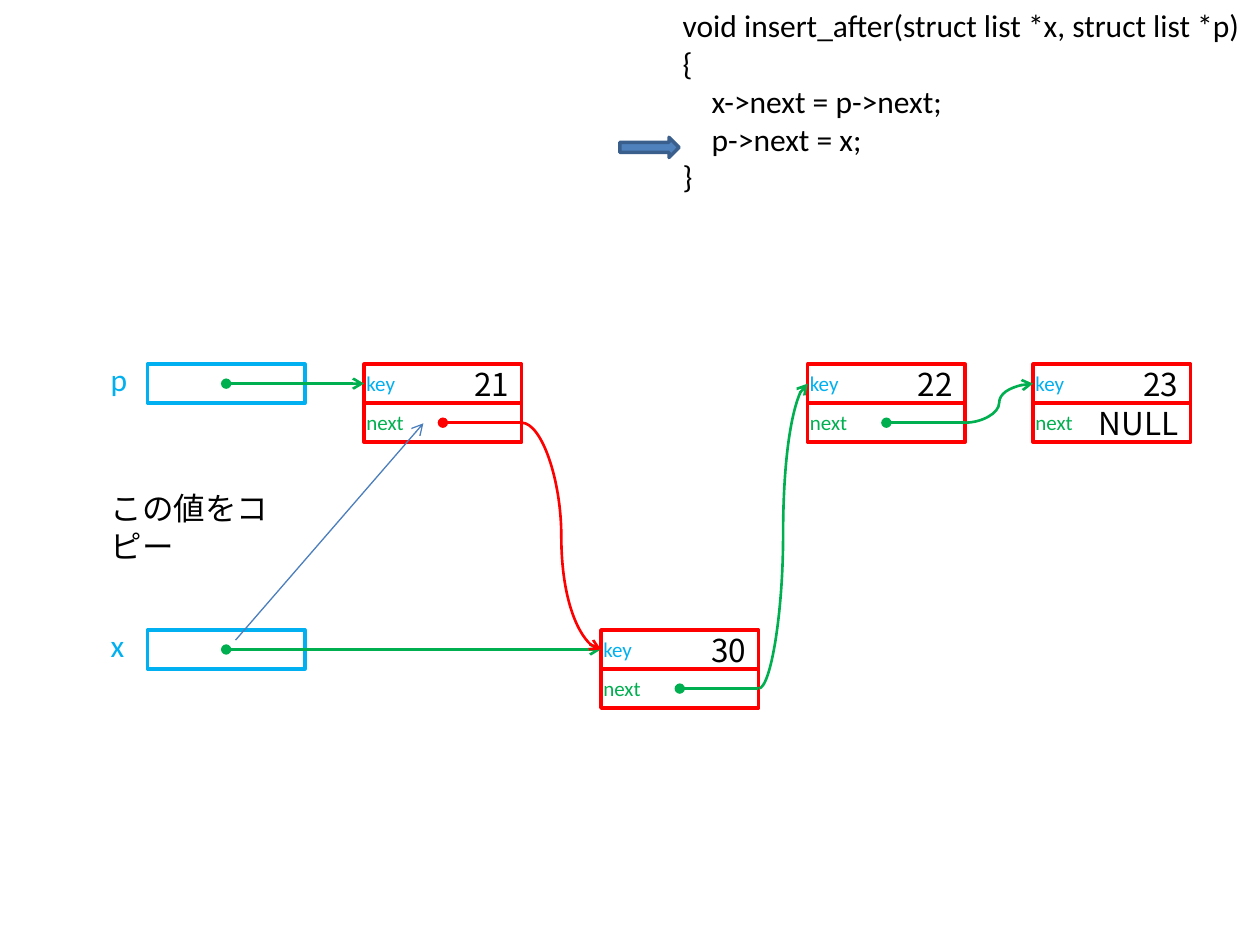
from lxml import etree
from pptx import Presentation
from pptx.dml.color import RGBColor
from pptx.enum import shapes, text
from pptx.oxml import ns
from pptx.util import Inches, Pt

CYAN = RGBColor(0x00, 0xB0, 0xF0)
GREEN = RGBColor(0x00, 0xB0, 0x50)
RED = RGBColor(0xFF, 0x00, 0x00)
BLACK = RGBColor(0x00, 0x00, 0x00)
BLUE = RGBColor(0x4F, 0x81, 0xBD)
DARK_BLUE = RGBColor(0x3A, 0x5F, 0x8C)
COPY_BLUE = RGBColor(0x4B, 0x7E, 0xBC)
LATIN, CJK = "Calibri", "Noto Sans CJK JP"

W, H = 1.25, 0.31
TOP, LOW = 2.89, 5
VAR_X = 1.17
CODE = [
    ("void insert_after(struct list *x, struct list *p)", 0),
    ("{", 0),
    ("x->next = p->next;", 0.23),
    ("p->next = x;", 0.23),
    ("}", 0),
]
VARIABLES = [("p", TOP), ("x", LOW)]
NODES = {
    "21": (2.89, TOP, ""),
    "22": (6.41, TOP, ""),
    "23": (8.2, TOP, "NULL"),
    "30": (4.77, LOW, ""),
}
VARIABLE_LINKS = [(TOP, "21"), (LOW, "30")]
NODE_LINKS = [("21", "30", RED), ("22", "23", GREEN), ("30", "22", GREEN)]

prs = Presentation()
prs.slide_width, prs.slide_height = Inches(10), Inches(7.5)
s = prs.slides.add_slide(prs.slide_layouts[6])


def write(tf, lines, size=18, color=BLACK, font=LATIN, align=text.PP_ALIGN.LEFT):
    for i, (line, indent) in enumerate(lines):
        p = tf.paragraphs[0] if i == 0 else tf.add_paragraph()
        p.alignment = align
        if indent:
            p._p.get_or_add_pPr().set("marL", str(Inches(indent)))
        r = p.add_run()
        r.text = line
        r.font.name, r.font.size = font, Pt(size)
        r.font.color.rgb = color
        ea = etree.SubElement(r._r.get_or_add_rPr(), ns.qn("a:ea"))
        ea.set("typeface", CJK)


def label(content, x, y, w, h, wrap=True, **fmt):
    tf = s.shapes.add_textbox(Inches(x), Inches(y), Inches(w), Inches(h)).text_frame
    tf.word_wrap = wrap
    lines = [(content, 0)] if isinstance(content, str) else content
    write(tf, lines, **fmt)


def box(x, y, color, value="", w=W, h=H, kind=shapes.MSO_SHAPE.RECTANGLE, fill=None):
    sp = s.shapes.add_shape(kind, Inches(x), Inches(y), Inches(w), Inches(h))
    sp.shadow.inherit = False
    sp.line.color.rgb, sp.line.width = color, Pt(2)
    if fill is None:
        sp.fill.background()
    else:
        sp.fill.solid()
        sp.fill.fore_color.rgb = fill
    if value:
        sp.text_frame.vertical_anchor = text.MSO_ANCHOR.MIDDLE
        write(sp.text_frame, [(value, 0)], font=CJK, align=text.PP_ALIGN.RIGHT)


def connect(start, end, color, end_tag, kind=shapes.MSO_CONNECTOR.STRAIGHT, width=1.5):
    cx = s.shapes.add_connector(kind, *[Inches(v) for v in (*start, *end)])
    cx.line.color.rgb, cx.line.width = color, Pt(width)
    marker = etree.SubElement(cx.line._get_or_add_ln(), ns.qn("a:" + end_tag))
    marker.set("type", "oval" if end_tag == "headEnd" else "arrow")
    etree.SubElement(cx._element.spPr, ns.qn("a:effectLst"))


def pointer(x, y, target, color):
    mid = y + H / 2
    tx, ty, _ = NODES[target]
    connect((x + W / 2, mid), (x + W, mid), color, "headEnd")
    connect((x + W, mid), (tx, ty + H / 2), color, "tailEnd", shapes.MSO_CONNECTOR.CURVE)


for name, y in VARIABLES:
    box(VAR_X, y, CYAN)
    label(name, 0.78, y - 0.08, 0.48, 0.4, color=CYAN)

for key, (x, y, following) in NODES.items():
    fields = [("next", following, y + H, GREEN), ("key", key, y, CYAN)]
    for field, value, top, color in fields:
        box(x, top, RED, value)
        label(field, x - 0.08, top, 0.63, 0.3, size=12, color=color)

for y, target in VARIABLE_LINKS:
    pointer(VAR_X, y, target, GREEN)
for source, target, color in NODE_LINKS:
    x, y, _ = NODES[source]
    pointer(x, y + H, target, color)

label(CODE, 5.32, 0, 4.68, 1.92, wrap=False)
box(4.92, 1.09, DARK_BLUE, w=0.47, h=0.16, kind=shapes.MSO_SHAPE.RIGHT_ARROW, fill=BLUE)
connect((1.87, 5.08), (3.36, 3.36), COPY_BLUE, "tailEnd", width=0.75)
label("この値をコピー", 0.78, 3.83, 1.81, 0.4)

prs.save("out.pptx")
